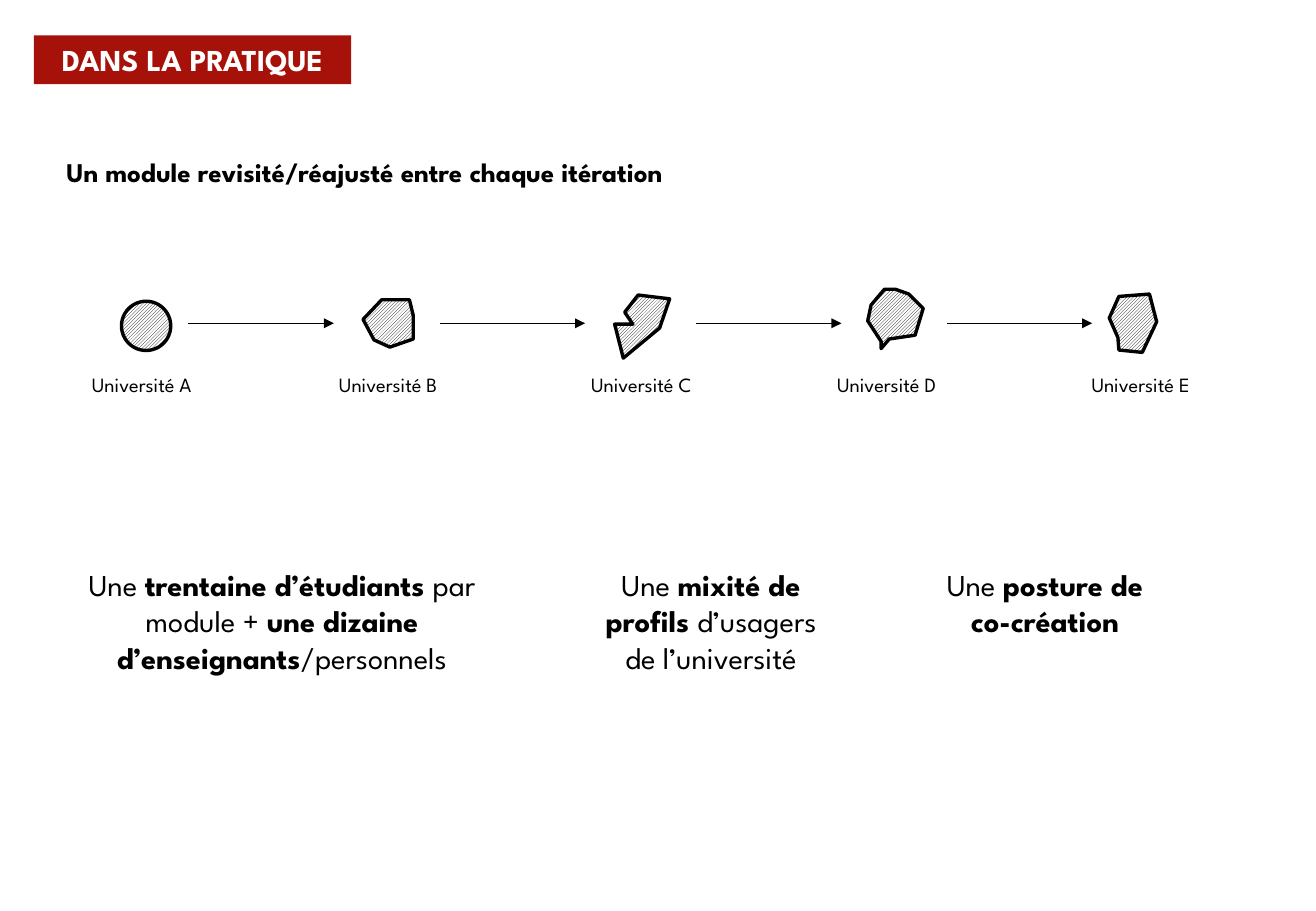
from lxml.etree import SubElement
from pptx import Presentation
from pptx.dml.color import RGBColor
from pptx.enum.dml import MSO_PATTERN
from pptx.enum.shapes import MSO_CONNECTOR, MSO_SHAPE
from pptx.enum.text import MSO_ANCHOR, MSO_AUTO_SIZE, PP_ALIGN
from pptx.oxml.ns import qn
from pptx.util import Cm, Pt

FONT = "League Spartan"
BLACK, WHITE, RED = "000000", "FFFFFF", "A61209"
LABEL_TOP, LABEL_WIDTH = 7.67, 5.11
ARROW_Y, ARROW_LENGTH = 6.76, 3.04

# Name, label left, outline points (cm)
UNIVERSITIES = [
    ("Université A", 0.41, None),
    ("Université B", 5.56, [
        (7.59, 6.68), (7.98, 6.27), (8.56, 6.27), (8.64, 6.6),
        (8.64, 7.09), (8.15, 7.26), (7.82, 7.11)]),
    ("Université C", 10.85, [
        (13.06, 6.53), (13.34, 6.17), (14, 6.25), (13.79, 6.86),
        (13.03, 7.49), (12.85, 6.78), (13.23, 6.78)]),
    ("Université D", 15.98, [
        (18.42, 7.14), (18.14, 6.71), (18.21, 6.38), (18.49, 6.05),
        (18.72, 6.05), (19, 6.15), (19.3, 6.45), (19.13, 7.01),
        (18.59, 7.09), (18.42, 7.29)]),
    ("Université E", 21.29, [
        (23.37, 7.06), (23.19, 6.65), (23.39, 6.2), (24.03, 6.15),
        (24.18, 6.73), (23.88, 7.37), (23.39, 7.32)]),
]
ARROW_STARTS = [3.94, 9.19, 14.55, 19.79]

# Left, width, height (cm), then runs as (text, bold)
FINDINGS = [
    (1.5, 8.79, 2.57, [
        ("Une ", False), ("trentaine d’étudiants ", True),
        ("par module + ", False), ("une dizaine d’enseignants", True),
        ("/personnels", False)]),
    (12.12, 5.49, 2.57, [
        ("Une ", False), ("mixité de profils ", True),
        ("d’usagers de l’université", False)]),
    (19.1, 5.49, 1.8, [("Une ", False), ("posture de co-création", True)]),
]


def rgb(color):
    return RGBColor.from_string(color)


def add_runs(p, runs, size, color=BLACK, align=PP_ALIGN.CENTER):
    p.alignment = align
    for text, bold in runs:
        r = p.add_run()
        r.text = text
        r.font.name = FONT
        r.font.size = Pt(size)
        r.font.bold = bold
        r.font.color.rgb = rgb(color)


def set_title(s, text):
    title = s.shapes.title
    title.left, title.top = Cm(0.71), Cm(0.74)
    title.width, title.height = Cm(6.63), Cm(1.02)
    title.fill.solid()
    title.fill.fore_color.rgb = rgb(RED)
    tf = title.text_frame
    tf.vertical_anchor = MSO_ANCHOR.MIDDLE
    tf.auto_size = MSO_AUTO_SIZE.NONE
    add_runs(tf.paragraphs[0], [(text, True)], 18, WHITE)


def add_text(s, left, top, width, height, runs, size, align=PP_ALIGN.CENTER):
    tf = s.shapes.add_textbox(Cm(left), Cm(top), Cm(width), Cm(height)).text_frame
    tf.word_wrap = True
    tf.auto_size = MSO_AUTO_SIZE.SHAPE_TO_FIT_TEXT
    add_runs(tf.paragraphs[0], runs, size, align=align)


def add_arrow(s, left):
    arrow = s.shapes.add_connector(
        MSO_CONNECTOR.STRAIGHT, Cm(left), Cm(ARROW_Y),
        Cm(left + ARROW_LENGTH), Cm(ARROW_Y))
    arrow.line.color.rgb = rgb(BLACK)
    arrow.line.width = Pt(0.75)
    SubElement(arrow.line._get_or_add_ln(), qn("a:tailEnd"), type="triangle")
    SubElement(arrow._element.spPr, qn("a:effectLst"))


def add_module(s, points):
    """Draw a hatched module: a circle at first, then a reworked outline."""
    if points:
        (x, y), *others = points
        builder = s.shapes.build_freeform(Cm(x), Cm(y))
        builder.add_line_segments([(Cm(x), Cm(y)) for x, y in others], close=True)
        sp = builder.convert_to_shape()
    else:
        sp = s.shapes.add_shape(MSO_SHAPE.OVAL, Cm(2.54), Cm(6.3), Cm(1.03), Cm(1.03))
    sp.shadow.inherit = False
    sp.fill.patterned()
    sp.fill.pattern = MSO_PATTERN.LIGHT_UPWARD_DIAGONAL
    sp.fill.fore_color.rgb = rgb(BLACK)
    sp.fill.back_color.rgb = rgb(WHITE)
    sp.line.color.rgb = rgb(BLACK)
    sp.line.width = Pt(2)


def main():
    prs = Presentation()
    prs.slide_width, prs.slide_height = Cm(27.51), Cm(19.05)
    s = prs.slides.add_slide(prs.slide_layouts[5])

    set_title(s, "DANS LA PRATIQUE")
    add_text(s, 1.14, 3.12, 14.66, 0.94,
             [("Un module revisité/réajusté entre chaque itération", True)],
             16, PP_ALIGN.LEFT)
    for name, left, points in UNIVERSITIES:
        add_module(s, points)
        add_text(s, left, LABEL_TOP, LABEL_WIDTH, 0.77, [(name, False)], 12)
    for left in ARROW_STARTS:
        add_arrow(s, left)
    for left, width, height, runs in FINDINGS:
        add_text(s, left, 11.71, width, height, runs, 18)

    prs.save("out.pptx")


if __name__ == "__main__":
    main()
